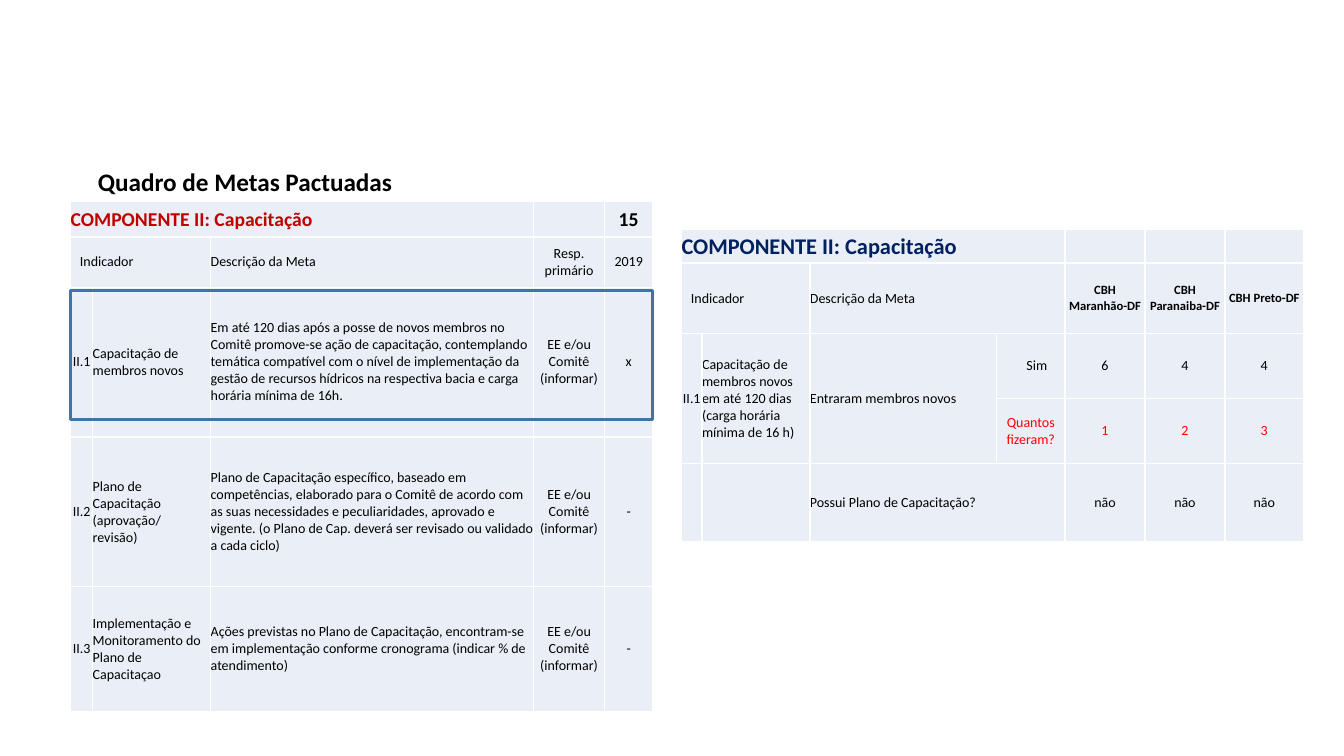
import lxml.etree
import pptx
import pptx.dml.color
import pptx.enum.shapes
import pptx.enum.text
import pptx.oxml.ns
import pptx.util

BLACK = pptx.dml.color.RGBColor(0x00, 0x00, 0x00)
WHITE = pptx.dml.color.RGBColor(0xFF, 0xFF, 0xFF)
RED = pptx.dml.color.RGBColor(0xFF, 0x00, 0x00)
DARK_RED = pptx.dml.color.RGBColor(0xC0, 0x00, 0x00)
NAVY = pptx.dml.color.RGBColor(0x00, 0x20, 0x60)
STEEL = pptx.dml.color.RGBColor(0x43, 0x73, 0x9E)
PALE_BLUE = pptx.dml.color.RGBColor(0xEA, 0xEF, 0xF7)

LEFT = pptx.enum.text.PP_ALIGN.LEFT
CENTER = pptx.enum.text.PP_ALIGN.CENTER
MIDDLE = pptx.enum.text.MSO_ANCHOR.MIDDLE

RESPONSIBLE = "EE e/ou Comitê (informar)"
GOALS = [
    ["COMPONENTE II: Capacitação", "", "", "", "15"],
    ["Indicador", "", "Descrição da Meta", "Resp. primário", "2019"],
    ["II.1", "Capacitação de membros novos",
     "Em até 120 dias após a posse de novos membros no Comitê promove-se ação de capacitação, "
     "contemplando temática compatível com o nível de implementação da gestão de recursos "
     "hídricos na respectiva bacia e carga horária mínima de 16h.", RESPONSIBLE, "x"],
    ["II.2", "Plano de Capacitação (aprovação/\nrevisão)",
     "Plano de Capacitação específico, baseado em competências, elaborado para o Comitê de "
     "acordo com as suas necessidades e peculiaridades, aprovado e vigente. (o Plano de Cap. "
     "deverá ser revisado ou validado a cada ciclo)", RESPONSIBLE, "-"],
    ["II.3", "Implementação e Monitoramento do Plano de Capacitaçao",
     "Ações previstas no Plano de Capacitação, encontram-se em implementação conforme "
     "cronograma (indicar % de atendimento)", RESPONSIBLE, "-"],
]
RESULTS = [
    ["COMPONENTE II: Capacitação", "", "", "", "", "", ""],
    ["Indicador", "", "Descrição da Meta", "", "CBH\nMaranhão-DF", "CBH\nParanaiba-DF",
     "CBH Preto-DF"],
    ["II.1", "Capacitação de membros novos em até 120 dias\n(carga horária mínima de 16 h)",
     "Entraram membros novos", "Sim", "6", "4", "4"],
    ["", "", "", "Quantos fizeram?", "1", "2", "3"],
    ["", "", "Possui Plano de Capacitação?", "", "não", "não", "não"],
]


def write_text(frame, text, size=10, color=BLACK, bold=False, align=LEFT, font="Calibri"):
    """Fill a text frame, one paragraph for each line of text."""
    frame.word_wrap = True
    for index, line in enumerate(text.split("\n")):
        paragraph = frame.add_paragraph() if index else frame.paragraphs[0]
        paragraph.alignment = align
        run = paragraph.add_run()
        run.text = line
        run.font.name = font
        run.font.size = pptx.util.Pt(size)
        run.font.bold = bold
        run.font.color.rgb = color


class GoalsSlide:
    """Build one slide on a grid of 100 columns by 100 rows."""

    def __init__(self, presentation):
        self.column = presentation.slide_width / 100
        self.row = presentation.slide_height / 100
        self.slide = presentation.slides.add_slide(presentation.slide_layouts[5])

    def box(self, left, top, width, height):
        """Turn grid units into slide lengths."""
        return (round(left * self.column), round(top * self.row),
                round(width * self.column), round(height * self.row))

    def title(self, text, *place, **style):
        """Move and fill the title placeholder."""
        shape = self.slide.shapes.title
        shape.left, shape.top, shape.width, shape.height = self.box(*place)
        shape.text_frame.auto_size = pptx.enum.text.MSO_AUTO_SIZE.NONE
        shape.text_frame.vertical_anchor = MIDDLE
        write_text(shape.text_frame, text, **style)

    def frame(self, *place, color, width):
        """Draw an unfilled rectangle."""
        shape = self.slide.shapes.add_shape(
            pptx.enum.shapes.MSO_SHAPE.RECTANGLE, *self.box(*place))
        shape.shadow.inherit = False
        shape.fill.background()
        shape.line.color.rgb = color
        shape.line.width = pptx.util.Pt(width)

    def cell(self, cell, text, indent=0, **style):
        """Format one table cell and write its text."""
        properties = cell._tc.get_or_add_tcPr()
        for side in ("a:lnL", "a:lnR", "a:lnT", "a:lnB"):
            line = lxml.etree.SubElement(
                properties, pptx.oxml.ns.qn(side), w=str(pptx.util.Pt(1)))
            fill = lxml.etree.SubElement(line, pptx.oxml.ns.qn("a:solidFill"))
            lxml.etree.SubElement(fill, pptx.oxml.ns.qn("a:srgbClr"), val=str(WHITE))
        cell.fill.solid()
        cell.fill.fore_color.rgb = PALE_BLUE
        cell.margin_left = round(indent * self.column)
        cell.margin_right = cell.margin_top = cell.margin_bottom = 0
        cell.vertical_anchor = MIDDLE
        write_text(cell.text_frame, text, **style)

    def table(self, left, top, widths, heights, texts, centered, merges, styles):
        """Add a table; styles holds the exceptions by row and column."""
        table = self.slide.shapes.add_table(
            len(heights), len(widths),
            *self.box(left, top, sum(widths), sum(heights))).table
        table.first_row = table.horz_banding = False
        for column, width in zip(table.columns, widths):
            column.width = round(width * self.column)
        for row, height in zip(table.rows, heights):
            row.height = round(height * self.row)
        for first, last in merges:
            table.cell(*first).merge(table.cell(*last))
        for row, line in enumerate(texts):
            for column, text in enumerate(line):
                style = {"align": CENTER if column in centered else LEFT}
                style.update(styles.get((row, column), {}))
                self.cell(table.cell(row, column), text, **style)


def main():
    """Build and save the presentation."""
    presentation = pptx.Presentation()
    presentation.slide_width = pptx.util.Inches(13.33)
    presentation.slide_height = pptx.util.Inches(7.5)
    slide = GoalsSlide(presentation)

    indicator = {"align": LEFT, "indent": 0.7}
    slide.table(
        5.25, 26.67, [1.65, 8.78, 24, 5.33, 3.55], [4.67, 6.67, 19.8, 19.8, 16.53],
        GOALS, centered={0, 3, 4},
        merges=[((0, 0), (0, 2)), ((1, 0), (1, 1))],
        styles={(0, 0): {"size": 14, "color": DARK_RED, "bold": True, "align": LEFT},
                (0, 4): {"size": 14, "bold": True, "align": CENTER},
                (1, 0): indicator})

    styles = {(0, 0): {"size": 16, "color": NAVY, "bold": True, "align": LEFT},
              (1, 0): indicator,
              (2, 3): {"align": CENTER, "indent": 0.9}}
    for column in range(3, 7):
        styles[3, column] = {"color": RED, "align": CENTER}
    for column in range(4, 7):
        styles[1, column] = {"size": 9, "bold": True, "align": CENTER}
    slide.table(
        50.71, 30.4, [1.53, 8.03, 13.88, 5.1, 5.95, 5.95, 5.85],
        [4.4, 9.33, 8.6, 8.6, 10.27], RESULTS, centered={0, 3, 4, 5, 6},
        merges=[((0, 0), (0, 3)), ((1, 0), (1, 1)), ((1, 2), (1, 3)), ((4, 2), (4, 3))]
        + [((2, column), (3, column)) for column in range(3)],
        styles=styles)

    slide.title("Quadro de Metas Pactuadas", 6.53, 21.4, 30.91, 5.33, size=18, bold=True)
    slide.frame(5.25, 38.4, 43.29, 17.07, color=STEEL, width=2.25)
    presentation.save("out.pptx")


if __name__ == "__main__":
    main()
